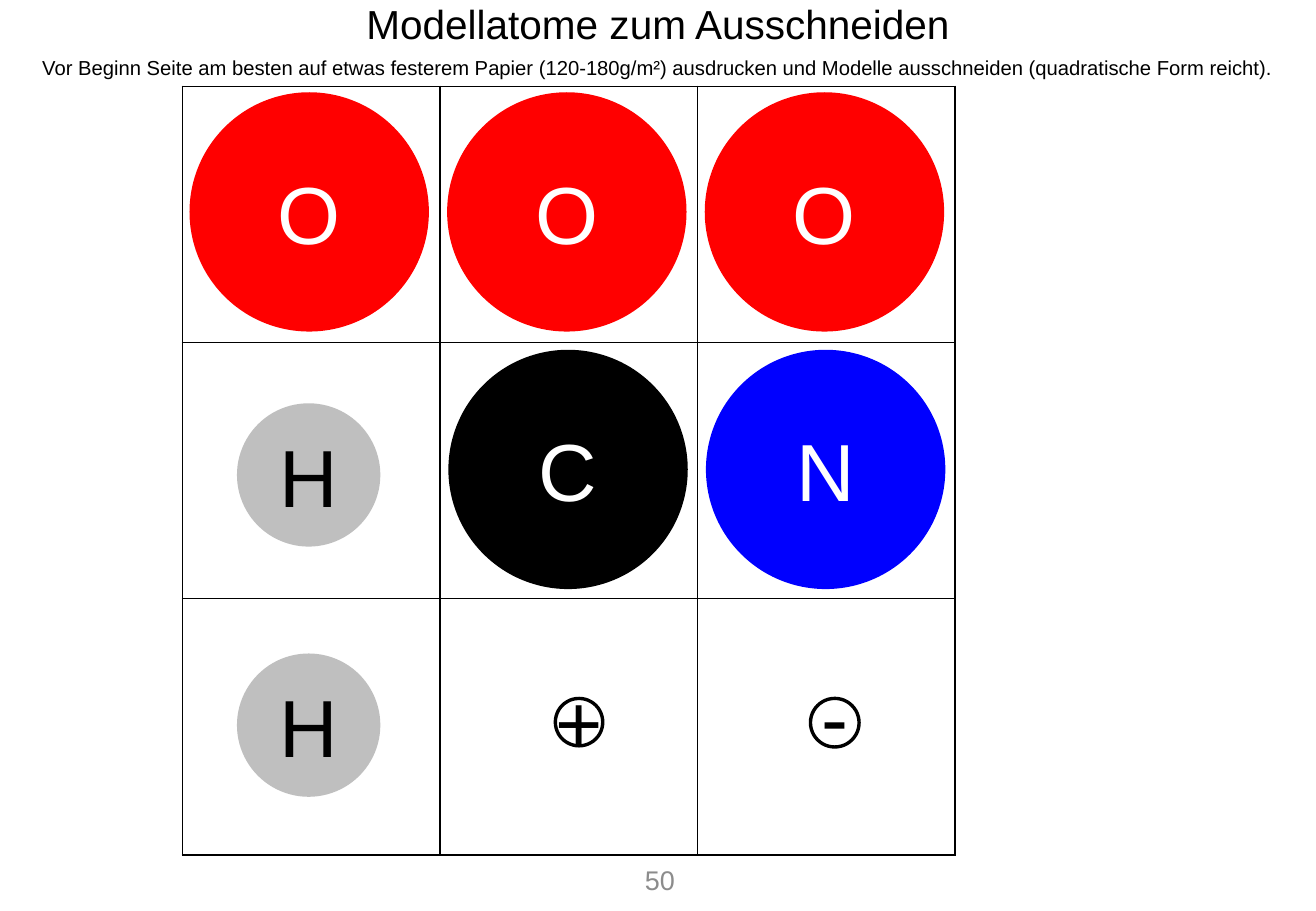
import dataclasses

import lxml.etree
import pptx
import pptx.dml.color
import pptx.enum.shapes
import pptx.enum.text
import pptx.oxml.ns
import pptx.presentation
import pptx.shapes.base
import pptx.slide
import pptx.text.text
import pptx.util

Inches = pptx.util.Inches
ALIGN = pptx.enum.text.PP_ALIGN
ANCHOR = pptx.enum.text.MSO_ANCHOR
OVAL = pptx.enum.shapes.MSO_SHAPE.OVAL
qn = pptx.oxml.ns.qn

COLORS = {
    "black": "000000",
    "white": "FFFFFF",
    "red": "FF0000",
    "blue": "0000FF",
    "silver": "BFBFBF",
    "gray": "8C8C8C",
}
CELL_SIZE = Inches(2.12)
ROW_HEIGHT = Inches(2.11)
GRID_COUNT = 3
LARGE = 1.97
SMALL = 1.18


@dataclasses.dataclass(frozen=True)
class Atom:
    symbol: str
    left: float
    top: float
    diameter: float
    fill: str
    color: str = "white"


@dataclasses.dataclass(frozen=True)
class Charge:
    sign: str
    text_box: tuple[float, float, float, float]
    circle_left: float
    diameter: float
    align: ALIGN
    anchor: ANCHOR


ATOMS = [
    *(Atom("O", 1.56 + 2.12 * column, 0.76, LARGE, "red") for column in range(GRID_COUNT)),
    Atom("C", 3.69, 2.88, LARGE, "black"),
    Atom("N", 5.81, 2.88, LARGE, "blue"),
    *(Atom("H", 1.95, top, SMALL, "silver", "black") for top in (3.32, 5.38)),
]
CHARGES = [
    Charge("+", (4.47, 5.48, 0.79, 0.91), 4.57, 0.39, ALIGN.LEFT, ANCHOR.TOP),
    Charge("-", (6.47, 5.43, 0.8, 0.91), 6.67, 0.4, ALIGN.CENTER, ANCHOR.MIDDLE),
]


def rgb(name: str) -> pptx.dml.color.RGBColor:
    return pptx.dml.color.RGBColor.from_string(COLORS[name])


def write_text(
    shape: pptx.shapes.base.BaseShape,
    text: str,
    size: int,
    color: str = "black",
    align: ALIGN = ALIGN.CENTER,
    anchor: ANCHOR = ANCHOR.MIDDLE,
) -> pptx.text.text._Paragraph:
    frame = shape.text_frame
    frame.word_wrap = True
    frame.auto_size = pptx.enum.text.MSO_AUTO_SIZE.NONE
    frame.vertical_anchor = anchor
    paragraph = frame.paragraphs[0]
    paragraph.text = text
    paragraph.alignment = align
    paragraph.font.name = "Arial"
    paragraph.font.size = pptx.util.Pt(size)
    paragraph.font.color.rgb = rgb(color)
    return paragraph


def fill_placeholder(
    shape: pptx.shapes.base.BaseShape, top: float, height: float, text: str, size: int
) -> None:
    shape.left, shape.top = Inches(0), Inches(top)
    shape.width, shape.height = Inches(10.83), Inches(height)
    paragraph = write_text(shape, text, size)
    paragraph.line_spacing = 0.9
    paragraph.space_before = pptx.util.Pt(0)
    properties = paragraph._p.get_or_add_pPr()
    properties.set("marL", "0")
    properties.set("indent", "0")
    lxml.etree.SubElement(properties, qn("a:buNone"))
    properties.append(properties.find(qn("a:defRPr")))


def add_cutting_grid(slide: pptx.slide.Slide) -> None:
    table = slide.shapes.add_table(
        GRID_COUNT, GRID_COUNT, Inches(1.5), Inches(0.71),
        CELL_SIZE * GRID_COUNT, ROW_HEIGHT * GRID_COUNT,
    ).table
    table.first_row = False
    table.horz_banding = False
    for column in table.columns:
        column.width = CELL_SIZE
    for row in table.rows:
        row.height = ROW_HEIGHT
    for cell in table.iter_cells():
        cell.fill.background()
        properties = cell._tc.get_or_add_tcPr()
        for position, side in enumerate(("lnL", "lnR", "lnT", "lnB")):
            border = lxml.etree.Element(qn(f"a:{side}"), w=str(pptx.util.Pt(1)))
            fill = lxml.etree.SubElement(border, qn("a:solidFill"))
            lxml.etree.SubElement(fill, qn("a:srgbClr"), val=COLORS["black"])
            properties.insert(position, border)


def add_atom(slide: pptx.slide.Slide, atom: Atom) -> None:
    circle = slide.shapes.add_shape(
        OVAL, Inches(atom.left), Inches(atom.top), Inches(atom.diameter), Inches(atom.diameter)
    )
    circle.shadow.inherit = False
    circle.fill.solid()
    circle.fill.fore_color.rgb = rgb(atom.fill)
    circle.line.fill.background()
    write_text(circle, atom.symbol, 48, atom.color)


def add_charge(slide: pptx.slide.Slide, charge: Charge) -> None:
    group = slide.shapes.add_group_shape()
    text_box = group.shapes.add_textbox(*map(Inches, charge.text_box))
    write_text(text_box, charge.sign, 48, align=charge.align, anchor=charge.anchor)
    circle = group.shapes.add_shape(
        OVAL, Inches(charge.circle_left), Inches(5.75),
        Inches(charge.diameter), Inches(charge.diameter),
    )
    circle.shadow.inherit = False
    circle.fill.background()
    circle.line.color.rgb = rgb("black")
    circle.line.width = pptx.util.Pt(2)


def build_slide(presentation: pptx.presentation.Presentation) -> None:
    slide = presentation.slides.add_slide(presentation.slide_layouts[1])
    fill_placeholder(slide.shapes.title, 0, 0.44, "Modellatome zum Ausschneiden", 24)
    fill_placeholder(
        slide.placeholders[1], 0.42, 0.29,
        "Vor Beginn Seite am besten auf etwas festerem Papier (120-180g/m²) ausdrucken "
        "und Modelle ausschneiden (quadratische Form reicht).",
        12,
    )
    page_number = slide.shapes.add_textbox(Inches(4.21), Inches(7.05), Inches(2.44), Inches(0.39))
    write_text(page_number, "50", 16, "gray")
    add_cutting_grid(slide)
    for atom in ATOMS:
        add_atom(slide, atom)
    for charge in CHARGES:
        add_charge(slide, charge)


def main() -> None:
    presentation = pptx.Presentation()
    presentation.slide_width = Inches(10.83)
    presentation.slide_height = Inches(7.5)
    build_slide(presentation)
    presentation.save("out.pptx")


if __name__ == "__main__":
    main()
